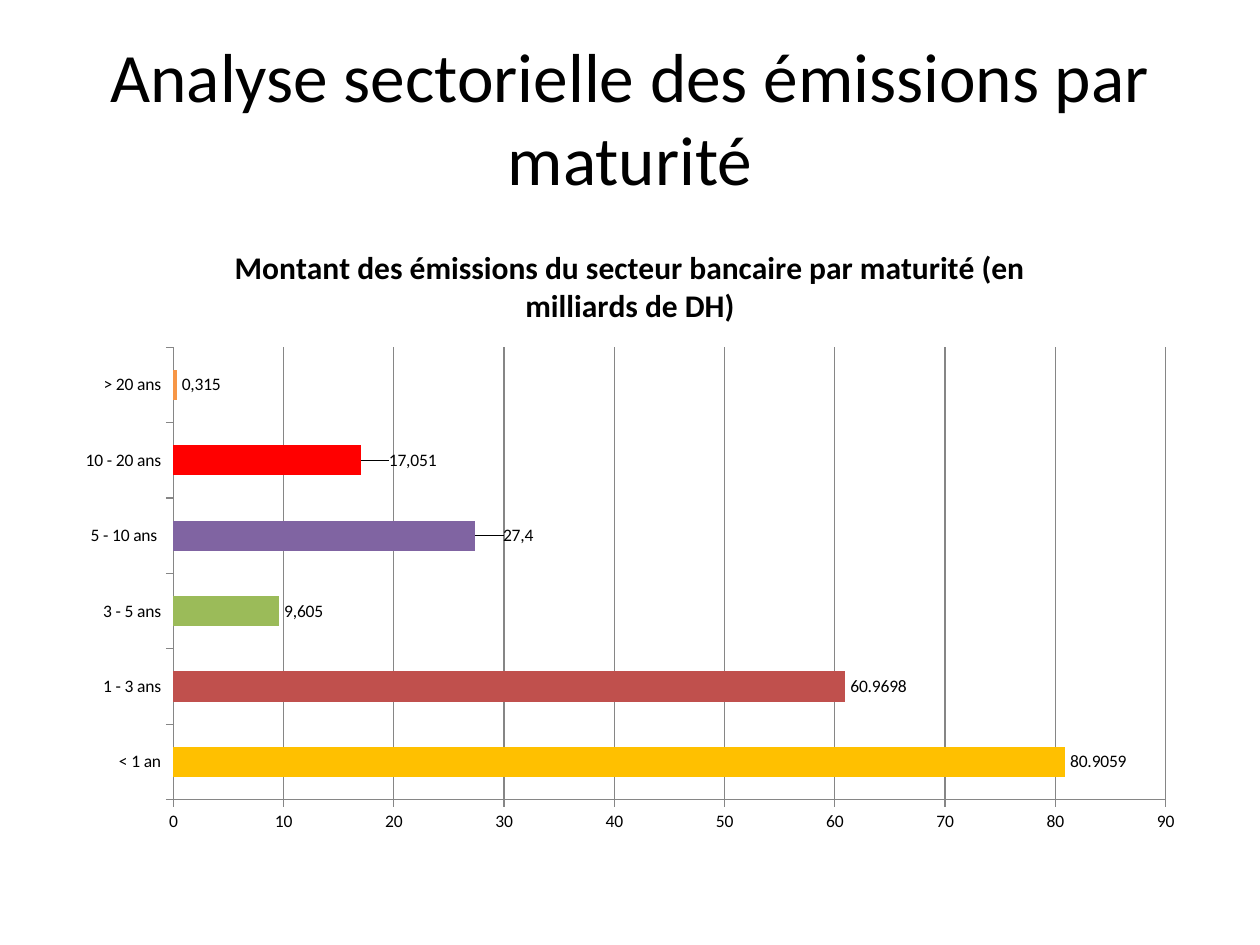
from pptx import Presentation
from pptx.chart.data import CategoryChartData as Data
from pptx.dml.color import RGBColor as Rgb
from pptx.enum.chart import XL_CHART_TYPE as Kind, XL_LABEL_POSITION as Spot, XL_TICK_MARK as Tick
from pptx.enum.text import MSO_ANCHOR as Anchor, PP_ALIGN as Align
from pptx.oxml import parse_xml
from pptx.oxml.ns import nsdecls
from pptx.util import Inches, Pt

TITLE = "Analyse sectorielle des émissions par maturité"
HEAD = "Montant des émissions du secteur bancaire par maturité (en milliards de DH)"
BARS = [
    ("< 1 an", 80.9059, "gold", None, 0),
    ("1 - 3 ans", 60.9698, "brick", None, 0),
    ("3 - 5 ans", 9.605, "green", "9,605", 0),
    ("5 - 10 ans ", 27.4, "purple", "27,4", 0.02),
    ("10 - 20 ans", 17.051, "red", "17,051", 0.02),
    ("> 20 ans", 0.315, "orange", "0,315", 0),
]
HEX = {
    "gold": "FFC000", "brick": "C0504D", "green": "9BBB59", "purple": "8064A2",
    "red": "FF0000", "orange": "F79646", "black": "000000", "gray": "868686",
}
BODY = {"name": "Calibri", "size": Pt(10), "bold": False}
BOLD = {"name": "Calibri", "size": Pt(18), "bold": True}
LARGE = {"name": "Calibri", "size": Pt(39.6), "bold": False}


def color(name):
    return Rgb.from_string(HEX[name])


def style(font, form):
    for key, val in form.items():
        setattr(font, key, val)
    font.color.rgb = color("black")


def place(shape, left, top, width, height):
    shape.left, shape.top = Inches(left), Inches(top)
    shape.width, shape.height = Inches(width), Inches(height)


def write(frame, text, form):
    frame.text = text
    style(frame.paragraphs[0].runs[0].font, form)


def shift(chart, idx, gap):
    mark = chart.element.xpath(f".//c:dLbl/c:idx[@val='{idx}']")[0]
    mark.addnext(parse_xml(
        f'<c:layout {nsdecls("c")}><c:manualLayout><c:x val="{gap}"/>'
        '<c:y val="0"/></c:manualLayout></c:layout>'))


def add_title(slide):
    title = slide.shapes.title
    place(title, 0.5, 0.3, 9, 1.25)
    frame = title.text_frame
    write(frame, TITLE, LARGE)
    frame.word_wrap = True
    frame.vertical_anchor = Anchor.MIDDLE
    frame.paragraphs[0].alignment = Align.CENTER


def add_bars(slide):
    data = Data()
    data.categories = [bar[0] for bar in BARS]
    data.add_series("Series 1", [bar[1] for bar in BARS])
    box = [Inches(n) for n in (0.5, 1.75, 9, 4.95)]
    chart = slide.shapes.add_chart(Kind.BAR_CLUSTERED, *box, data).chart
    style(chart.font, BODY)
    chart.has_legend = False
    chart.has_title = True
    write(chart.chart_title.text_frame, HEAD, BOLD)

    for axis in (chart.category_axis, chart.value_axis):
        axis.major_tick_mark = Tick.OUTSIDE
        axis.minor_tick_mark = Tick.NONE
        axis.format.line.color.rgb = color("gray")
    axis = chart.value_axis
    axis.minimum_scale, axis.maximum_scale, axis.major_unit = 0, 90, 10
    axis.has_major_gridlines = True
    axis.major_gridlines.format.line.color.rgb = color("gray")

    plot = chart.plots[0]
    plot.gap_width = 150
    plot.vary_by_categories = False
    row = plot.series[0]
    tags = row.data_labels
    tags.show_value = True
    tags.position = Spot.OUTSIDE_END
    style(tags.font, BODY)
    for idx, (_, _, tint, text, gap) in enumerate(BARS):
        point = row.points[idx]
        point.format.fill.solid()
        point.format.fill.fore_color.rgb = color(tint)
        if text:
            write(point.data_label.text_frame, text, BODY)
            point.data_label.position = Spot.OUTSIDE_END
        if gap:
            shift(chart, idx, gap)


def main():
    deck = Presentation()
    deck.slide_width, deck.slide_height = Inches(10), Inches(7.5)
    slide = deck.slides.add_slide(deck.slide_layouts[5])
    add_title(slide)
    add_bars(slide)
    deck.save("out.pptx")


if __name__ == "__main__":
    main()
